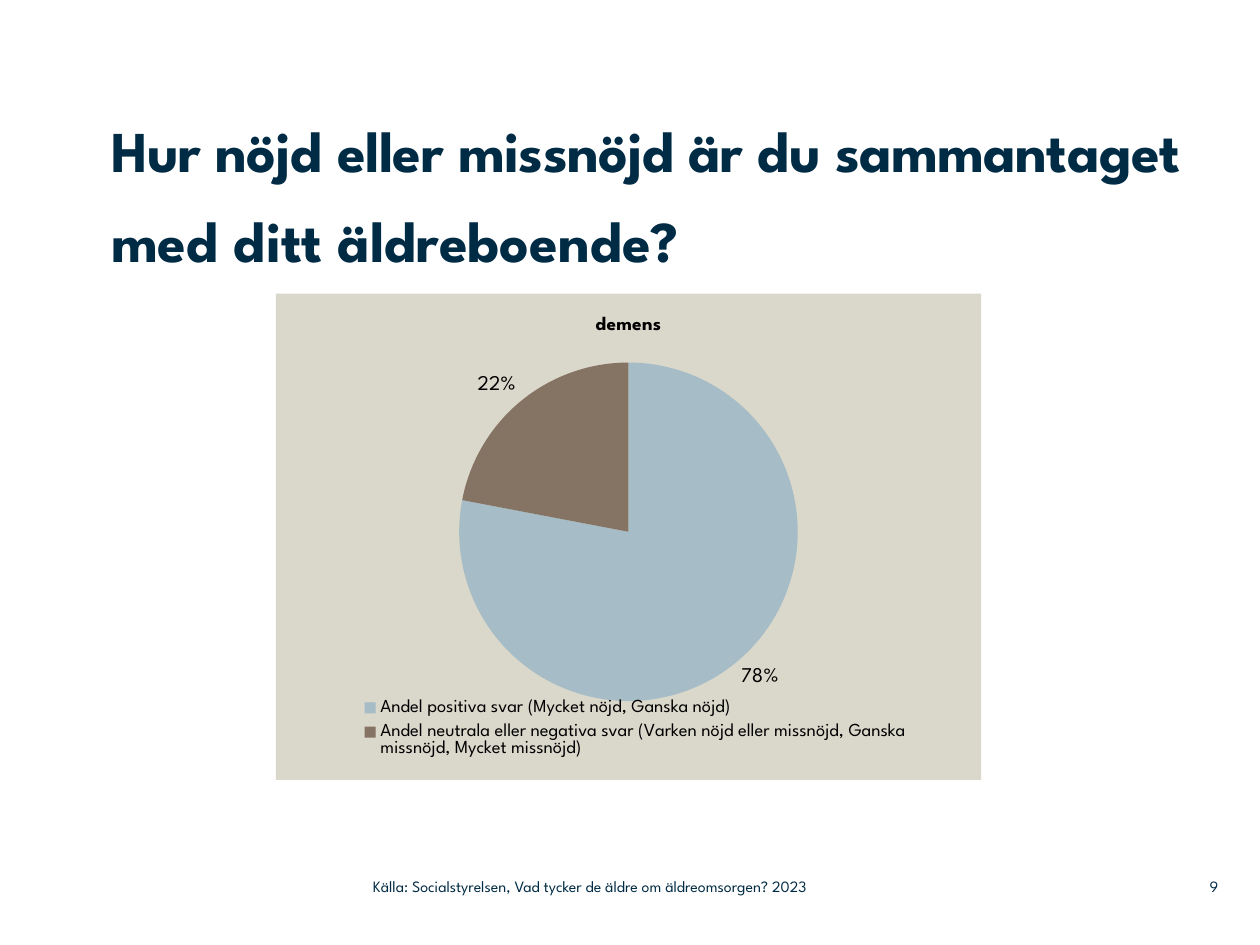
from lxml import etree
from pptx import Presentation
from pptx.chart.data import CategoryChartData
from pptx.dml.color import RGBColor
from pptx.enum import chart as charts, text
from pptx.oxml import parse_xml
from pptx.oxml.ns import nsdecls, qn
from pptx.util import Cm, Pt

FONT = "League Spartan"
COLORS = {"navy": "002B45", "black": "000000", "sand": "DAD7CB",
          "blue": "A6BCC6", "brown": "857363"}
TITLE = [("Hur nöjd eller missnöjd är du sammantaget ", -30),
         ("med ditt äldreboende?", 0)]
FOOTERS = [
    ("9", (23.37, 17.5, 1.19, 0.74), text.PP_ALIGN.RIGHT),
    ("Källa: Socialstyrelsen, Vad tycker de äldre om äldreomsorgen? 2023",
     (7.52, 17.5, 11.25, 0.74), text.PP_ALIGN.LEFT),
]
SERIES = "demens"
ANSWERS = [
    ("Andel positiva svar (Mycket nöjd, Ganska nöjd)", 78, "blue"),
    ("Andel neutrala eller negativa svar (Varken nöjd eller missnöjd, "
     "Ganska missnöjd, Mycket missnöjd)", 22, "brown"),
]
TITLE_AREA = (2.24, 1.9, 22.43, 3.61)
CHART_AREA = (5.56, 5.92, 14.22, 9.8)
PIE_LAYOUT = {"x": 0.26, "y": 0.14, "w": 0.48, "h": 0.7}
LEGEND_LAYOUT = {"x": 0.11, "y": 0.82, "w": 0.8, "h": 0.15}


def color(name):
    return RGBColor.from_string(COLORS[name])


def style(font, size, shade="black", bold=False):
    values = {"name": FONT, "size": Pt(size), "bold": bold}
    for key, value in values.items():
        setattr(font, key, value)
    font.color.rgb = color(shade)


def prepare(frame, anchor):
    values = {"margin_left": 0, "margin_top": 0, "margin_right": 0,
              "margin_bottom": 0, "word_wrap": True,
              "auto_size": text.MSO_AUTO_SIZE.NONE, "vertical_anchor": anchor}
    for key, value in values.items():
        setattr(frame, key, value)


def add_title(page):
    box = page.shapes.title
    box.left, box.top, box.width, box.height = map(Cm, TITLE_AREA)
    prepare(box.text_frame, text.MSO_ANCHOR.TOP)
    para = box.text_frame.paragraphs[0]
    para.alignment = text.PP_ALIGN.LEFT
    para.line_spacing = 1.3
    for words, spacing in TITLE:
        span = para.add_run()
        span.text = words
        style(span.font, 33, "navy", True)
        span.font._element.set("spc", str(spacing))


def add_footer(page, words, area, alignment):
    box = page.shapes.add_textbox(*map(Cm, area))
    prepare(box.text_frame, text.MSO_ANCHOR.MIDDLE)
    para = box.text_frame.paragraphs[0]
    para.alignment = alignment
    span = para.add_run()
    span.text = words
    style(span.font, 9, "navy")


def set_layout(element, places, inner=False):
    for old in element.findall(qn("c:layout")):
        element.remove(old)
    layout = etree.Element(qn("c:layout"))
    manual = etree.SubElement(layout, qn("c:manualLayout"))
    if inner:
        etree.SubElement(manual, qn("c:layoutTarget"), val="inner")
    for key in "xy":
        etree.SubElement(manual, qn(f"c:{key}Mode"), val="edge")
    for key, value in places.items():
        etree.SubElement(manual, qn(f"c:{key}"), val=str(value))
    element.insert(0 if inner else 1, layout)


def add_pie(page):
    data = CategoryChartData()
    data.categories = [answer for answer, _, _ in ANSWERS]
    data.add_series(SERIES, [value for _, value, _ in ANSWERS])
    chart = page.shapes.add_chart(
        charts.XL_CHART_TYPE.PIE, *map(Cm, CHART_AREA), data).chart
    style(chart.font, 18)

    chart.has_title = True
    chart.chart_title.include_in_layout = False
    span = chart.chart_title.text_frame.paragraphs[0].add_run()
    span.text = SERIES
    style(span.font, 11, bold=True)

    chart.has_legend = True
    chart.legend.position = charts.XL_LEGEND_POSITION.BOTTOM
    chart.legend.include_in_layout = False
    style(chart.legend.font, 10.5)

    plot = chart.plots[0]
    plot.vary_by_categories = True
    plot.has_data_labels = True
    labels = plot.data_labels
    values = {"show_percentage": True, "show_value": False,
              "number_format": "0%", "number_format_is_linked": False,
              "position": charts.XL_LABEL_POSITION.OUTSIDE_END}
    for key, value in values.items():
        setattr(labels, key, value)
    style(labels.font, 12)

    for index, (_, _, shade) in enumerate(ANSWERS):
        part = plot.series[0].points[index].format
        part.fill.solid()
        part.fill.fore_color.rgb = color(shade)
        part.line.fill.background()

    space = chart._chartSpace
    set_layout(space.find(".//" + qn("c:plotArea")), PIE_LAYOUT, inner=True)
    set_layout(space.find(".//" + qn("c:legend")), LEGEND_LAYOUT)
    space.find(qn("c:chart")).addnext(parse_xml(
        f'<c:spPr {nsdecls("c", "a")}><a:solidFill><a:srgbClr val="{COLORS["sand"]}"/>'
        "</a:solidFill><a:ln><a:noFill/></a:ln></c:spPr>"))


def main():
    deck = Presentation()
    deck.slide_width, deck.slide_height = Cm(25.4), Cm(19.05)
    page = deck.slides.add_slide(deck.slide_layouts[5])
    for footer in FOOTERS:
        add_footer(page, *footer)
    add_title(page)
    add_pie(page)
    deck.save("out.pptx")


if __name__ == "__main__":
    main()
